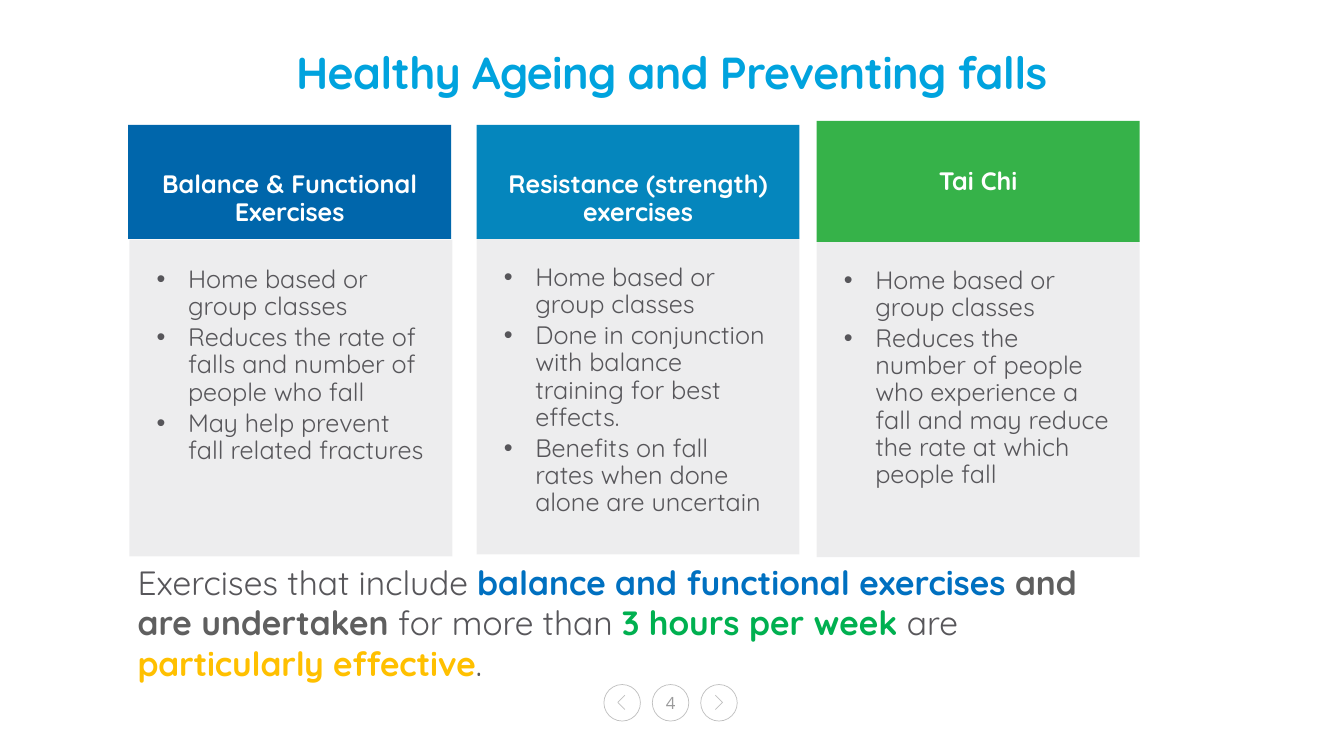
from pptx import Presentation
from pptx.dml.color import RGBColor
from pptx.enum.shapes import MSO_SHAPE
from pptx.enum.text import MSO_ANCHOR, PP_ALIGN
from pptx.util import Cm, Pt
from lxml import etree

RECT, OVAL = MSO_SHAPE.RECTANGLE, MSO_SHAPE.OVAL
TOP, MIDDLE = MSO_ANCHOR.TOP, MSO_ANCHOR.MIDDLE
LEFT, CENTER = PP_ALIGN.LEFT, PP_ALIGN.CENTER
NS = "{http://schemas.openxmlformats.org/drawingml/2006/main}"

WHITE = RGBColor(0xFF, 0xFF, 0xFF)
GREY = RGBColor(0x57, 0x56, 0x5A)
MID_GREY = RGBColor(0x5F, 0x5F, 0x5F)
NUMBER_GREY = RGBColor(0x9A, 0x9A, 0x9B)
LINE_GREY = RGBColor(0xBF, 0xBF, 0xBF)
SKY = RGBColor(0x00, 0xA3, 0xDE)
NAVY = RGBColor(0x00, 0x66, 0xAB)
TEAL = RGBColor(0x05, 0x86, 0xBD)
LEAF = RGBColor(0x36, 0xB2, 0x49)
BLUE = RGBColor(0x00, 0x70, 0xC0)
GREEN = RGBColor(0x00, 0xB0, 0x50)
AMBER = RGBColor(0xFF, 0xC0, 0x00)


def add_run(p, text, size=18, color=GREY, bold=False, font="Quicksand", spacing=0):
    r = p.add_run()
    r.text = text
    r.font.name, r.font.size, r.font.bold = font, Pt(size), bold
    r.font.color.rgb = color
    if spacing:
        r.font._element.set("spc", str(spacing))


class SlideBuilder:
    def __init__(self, slide):
        self.shapes = slide.shapes

    def frame(self, sp, insets, anchor=TOP, wrap=True):
        tf = sp.text_frame
        tf.word_wrap, tf.vertical_anchor = wrap, anchor
        tf.margin_left, tf.margin_top, tf.margin_right, tf.margin_bottom = map(Cm, insets)
        return tf

    def text(self, box, runs, insets, anchor=TOP, wrap=True, align=LEFT, line=1.0):
        sp = self.shapes.add_textbox(*map(Cm, box))
        p = self.frame(sp, insets, anchor, wrap).paragraphs[0]
        p.alignment, p.line_spacing = align, line
        for text, style in runs:
            add_run(p, text, **style)

    def outline(self, sp):
        sp.shadow.inherit = False
        sp.fill.background()
        sp.line.color.rgb, sp.line.width = LINE_GREY, Pt(0.5)

    def panel(self, box, fill, items, insets, alpha=None, bullets=False, **style):
        sp = self.shapes.add_shape(RECT, *map(Cm, box))
        sp.shadow.inherit = False
        sp.fill.solid()
        sp.fill.fore_color.rgb = fill
        sp.line.fill.background()
        if alpha:
            clr = sp._element.spPr.find(f"{NS}solidFill/{NS}srgbClr")
            etree.SubElement(clr, NS + "alpha", val=str(alpha * 1000))
        tf = self.frame(sp, insets)
        for i, item in enumerate(items):
            p = tf.add_paragraph() if i else tf.paragraphs[0]
            p.alignment = LEFT if bullets else CENTER
            p.line_spacing, p.space_after = 0.9, Pt(2.7)
            if bullets:
                pPr = p._p.get_or_add_pPr()
                pPr.set("marL", str(Cm(0.79)))
                pPr.set("indent", str(-Cm(0.79)))
                etree.SubElement(pPr, NS + "buFont", typeface="Arial")
                etree.SubElement(pPr, NS + "buChar", char="•")
            add_run(p, item, **style)

    def circle(self, x, y, d):
        self.outline(self.shapes.add_shape(OVAL, Cm(x), Cm(y), Cm(d), Cm(d)))

    def chevron(self, tip, back, y, half):
        fb = self.shapes.build_freeform(Cm(back), Cm(y - half))
        fb.add_line_segments([(Cm(tip), Cm(y)), (Cm(back), Cm(y + half))], close=False)
        self.outline(fb.convert_to_shape())


# left, header top, header height, body left, body top, colour, heading, points
COLUMNS = [
    (3.23, 3.15, 2.87, 3.26, 6.04, NAVY, "Balance & Functional Exercises",
     ["Home based or group classes",
      "Reduces the rate of falls and number of people who fall",
      "May help prevent fall related fractures"]),
    (12.01, 3.15, 2.87, 12.01, 5.99, TEAL, "Resistance (strength) exercises",
     ["Home based or group classes",
      "Done in conjunction with balance training for best effects.",
      "Benefits on fall rates when done alone are uncertain"]),
    (20.58, 3.05, 3.05, 20.58, 6.06, LEAF, "Tai Chi",
     ["Home based or group classes",
      "Reduces the number of people who experience a fall and may reduce "
      "the rate at which people fall"]),
]
COLUMN_W, BODY_H = 8.14, 7.98
HEADER_INSETS = (0.33, 1.19, 0.33, 0.33)
BODY_INSETS = (0.69, 0.68, 0.69, 0.69)

SUMMARY = [
    ("Exercises that include ", {}),
    ("balance and functional exercises ", {"color": BLUE, "bold": True}),
    ("and are undertaken ", {"color": MID_GREY, "bold": True}),
    ("for more than ", {}),
    ("3 hours per week ", {"color": GREEN, "bold": True}),
    ("are ", {}),
    ("particularly effective", {"color": AMBER, "bold": True, "spacing": -10}),
    (".", {}),
]


def main():
    prs = Presentation()
    prs.slide_width, prs.slide_height = Cm(33.87), Cm(19.05)
    s = SlideBuilder(prs.slides.add_slide(prs.slide_layouts[6]))

    # Page navigation
    for i in range(3):
        s.circle(15.22 + 1.22 * i, 17.25, 0.92)
    s.chevron(15.57, 15.75, 17.7, 0.18)
    s.chevron(18.21, 18.03, 17.7, 0.18)
    s.text((16.71, 17.25, 0.38, 0.91),
           [("4", {"size": 12, "color": NUMBER_GREY, "font": "Open Sans"})],
           (0, 0, 0, 0), MIDDLE, wrap=False, align=CENTER)

    # Title
    s.text((2.54, 0.77, 28.78, 2.26),
           [("Healthy Ageing and Preventing falls",
             {"size": 32, "color": SKY, "bold": True, "spacing": -50})],
           (0, 0, 0, 0), MIDDLE, align=CENTER, line=0.86)

    # Columns
    for x, y, h, body_x, body_y, fill, heading, points in COLUMNS:
        s.panel((body_x, body_y, COLUMN_W, BODY_H), GREY, points, BODY_INSETS,
                alpha=10, bullets=True)
        s.panel((x, y, COLUMN_W, h), fill, [heading], HEADER_INSETS,
                color=WHITE, bold=True)

    # Summary
    s.text((3.22, 14.03, 25.73, 3.33),
           [(text, {"size": 24, **style}) for text, style in SUMMARY],
           (0.25, 0.13, 0.25, 0.13))

    prs.save("out.pptx")


if __name__ == "__main__":
    main()
